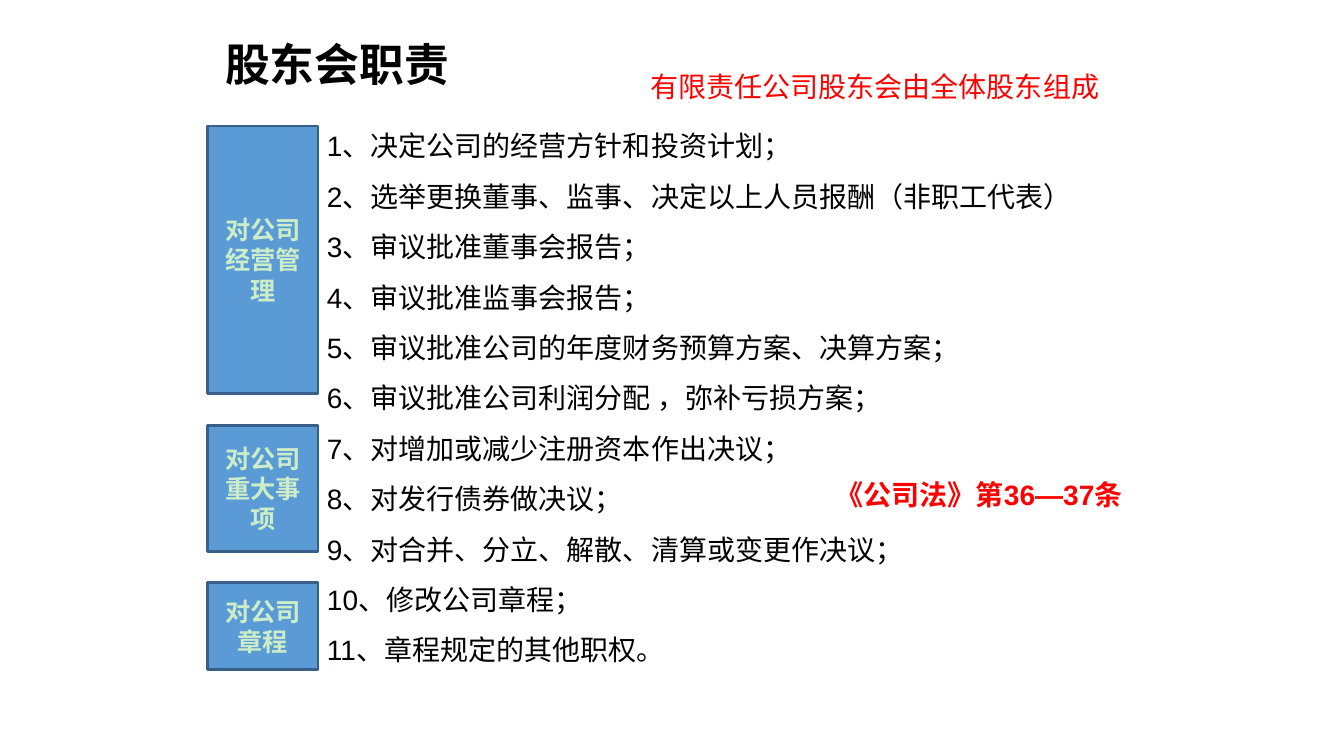
import pptx
import pptx.dml.color
import pptx.enum.lang
import pptx.enum.shapes
import pptx.enum.text
import pptx.util

PX = 9525
BLACK = pptx.dml.color.RGBColor(0x00, 0x00, 0x00)
RED = pptx.dml.color.RGBColor(0xFF, 0x00, 0x00)
BLUE = pptx.dml.color.RGBColor(0x5B, 0x9B, 0xD5)
NAVY = pptx.dml.color.RGBColor(0x39, 0x5E, 0x8A)
PALE_GREEN = pptx.dml.color.RGBColor(0xCC, 0xED, 0xC7)
LEFT = pptx.enum.text.PP_ALIGN.LEFT
CENTER = pptx.enum.text.PP_ALIGN.CENTER

DUTIES = [
    "决定公司的经营方针和投资计划；",
    "选举更换董事、监事、决定以上人员报酬（非职工代表）",
    "审议批准董事会报告；",
    "审议批准监事会报告；",
    "审议批准公司的年度财务预算方案、决算方案；",
    "审议批准公司利润分配 ，弥补亏损方案；",
    "对增加或减少注册资本作出决议；",
    "对发行债券做决议；",
    "对合并、分立、解散、清算或变更作决议；",
    "修改公司章程；",
    "章程规定的其他职权。",
]
CATEGORIES = [
    ("对公司重大事项", 285, 120),
    ("对公司经营管理", 0, 255),
    ("对公司章程", 435, 83),
]


def emu(*lengths):
    """Turn px lengths into EMU."""
    return [pptx.util.Emu(length * PX) for length in lengths]


def write_lines(frame, lines, size, color, bold=False, align=LEFT, spacing=1.0, face="Arial"):
    """Fill a text frame with one paragraph per line, all in one style."""
    for index, line in enumerate(lines):
        paragraph = frame.add_paragraph() if index else frame.paragraphs[0]
        paragraph.text = line
        paragraph.alignment = align
        paragraph.line_spacing = spacing
        font = paragraph.font
        font.name = face
        font.size = pptx.util.Pt(size)
        font.bold = bold
        font.color.rgb = color
        font.language_id = pptx.enum.lang.MSO_LANGUAGE_ID.SIMPLIFIED_CHINESE


def add_text(slide, box, lines, size, color, wrap=True, **style):
    """Place a text box that grows with its lines."""
    frame = slide.shapes.add_textbox(*emu(*box)).text_frame
    frame.word_wrap = wrap
    frame.auto_size = pptx.enum.text.MSO_AUTO_SIZE.SHAPE_TO_FIT_TEXT
    write_lines(frame, lines, size, color, **style)


def add_categories(slide, box):
    """Stack the category blocks down the given column."""
    left, top, width, _ = box
    for label, offset, height in CATEGORIES:
        block = slide.shapes.add_shape(
            pptx.enum.shapes.MSO_SHAPE.RECTANGLE, *emu(left, top + offset, width, height)
        )
        block.shadow.inherit = False
        block.fill.solid()
        block.fill.fore_color.rgb = BLUE
        block.line.color.rgb = NAVY
        block.line.width = pptx.util.Pt(2)
        block.text_frame.word_wrap = True
        block.text_frame.vertical_anchor = pptx.enum.text.MSO_ANCHOR.MIDDLE
        write_lines(block.text_frame, [label], 18, PALE_GREEN, bold=True,
                    align=CENTER, face="Noto Sans CJK SC")


def add_duties(slide, box):
    """List the numbered duties in the given box."""
    lines = [f"{number}、{duty}" for number, duty in enumerate(DUTIES, 1)]
    add_text(slide, box, lines, 20, BLACK, spacing=1.5)


def build_duties_slide(slide, box):
    """Lay out the heading, duties, remarks and categories within the box."""
    left, top, _, _ = box
    add_text(slide, (left + 205, top + 30, 233, 60), ["股东会职责"], 32, BLACK,
             wrap=False, bold=True)
    add_duties(slide, (left + 302, top + 102, 742, 538))
    add_text(slide, (left + 610, top + 45, 480, 58),
             ["有限责任公司股东会由全体股东组成"], 20, RED, spacing=1.5)
    add_text(slide, (left + 775, top + 450, 315, 41),
             ["《公司法》第36—37条"], 20, RED, bold=True, align=CENTER)
    add_categories(slide, (left + 198, top + 120, 105, 518))


def main():
    """Build and save the presentation."""
    presentation = pptx.Presentation()
    presentation.slide_width, presentation.slide_height = emu(1280, 720)
    slide = presentation.slides.add_slide(presentation.slide_layouts[6])
    build_duties_slide(slide, (0, 0, 1280, 720))
    presentation.save("out.pptx")


if __name__ == "__main__":
    main()
